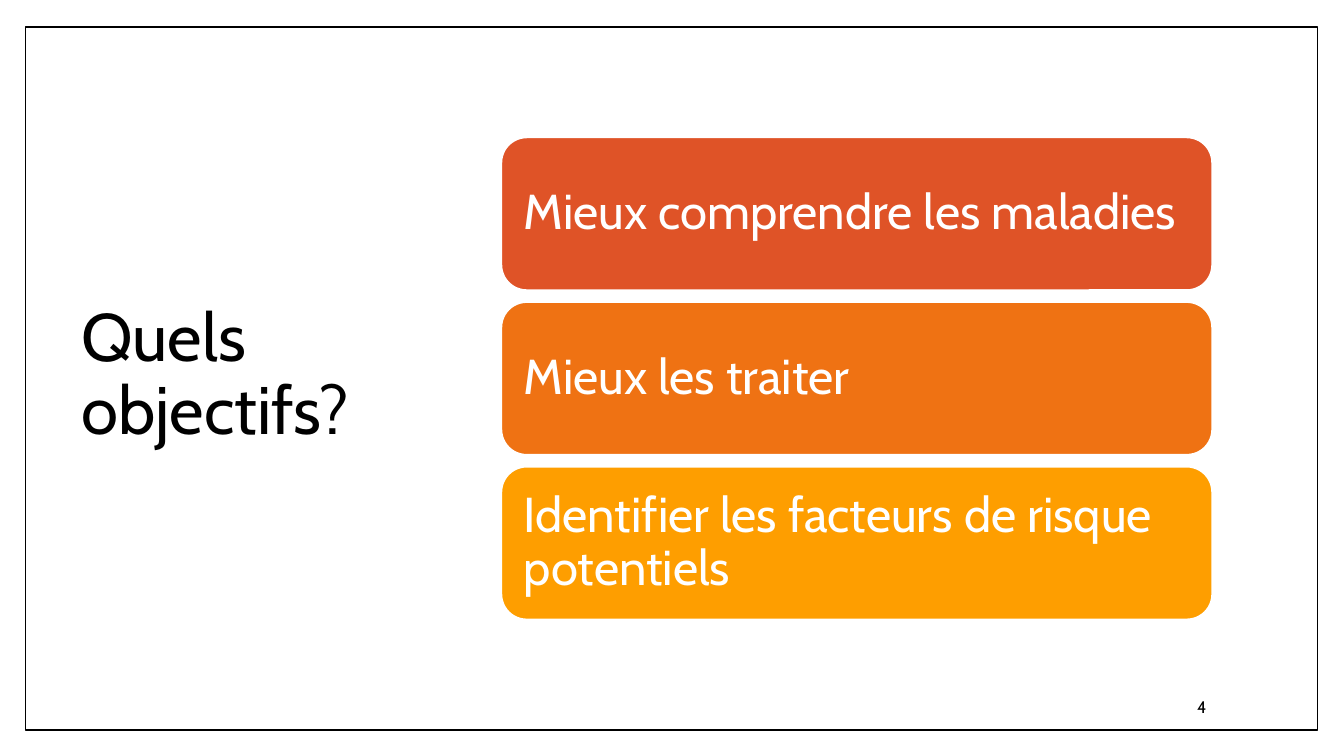
from pptx import Presentation
from pptx.dml.color import RGBColor
from pptx.enum.shapes import MSO_SHAPE
from pptx.enum.text import MSO_ANCHOR, PP_ALIGN
from pptx.util import Pt

RECT, ROUND = MSO_SHAPE.RECTANGLE, MSO_SHAPE.ROUNDED_RECTANGLE
MIDDLE = MSO_ANCHOR.MIDDLE
LEFT, RIGHT = PP_ALIGN.LEFT, PP_ALIGN.RIGHT
FONT = "Cabin"
COLORS = {"ink": "000000", "paper": "FFFFFF", "red": "DF5327",
          "orange": "EF7213", "amber": "FE9E00"}
GOALS = [("Mieux comprendre les maladies", "red"),
         ("Mieux les traiter", "orange"),
         ("Identifier les facteurs de risque potentiels", "amber")]


def color(name):
    """Return the named colour."""
    return RGBColor.from_string(COLORS[name])


def apply(target, values):
    """Set each value as an attribute of the target."""
    for name, value in values.items():
        setattr(target, name, value)


def write(shape, text, size, ink, para, inset=7.2):
    """Write one middle-anchored paragraph into a shape."""
    frame = shape.text_frame
    apply(frame, {"word_wrap": True, "vertical_anchor": MIDDLE,
                  "margin_left": Pt(inset), "margin_right": Pt(inset)})
    line = frame.paragraphs[0]
    apply(line, para)
    run = line.add_run()
    run.text = text
    apply(run.font, {"name": FONT, "size": Pt(size)})
    run.font.color.rgb = color(ink)


def panel(slide, kind, box, fill, edge, width):
    """Add a filled and outlined shape without a shadow."""
    shape = slide.shapes.add_shape(kind, *map(Pt, box))
    shape.shadow.inherit = False
    shape.fill.solid()
    shape.fill.fore_color.rgb = color(fill)
    shape.line.color.rgb = color(edge)
    shape.line.width = Pt(width)
    return shape


def label(slide, box, text, size, para):
    """Add a dark text box."""
    shape = slide.shapes.add_textbox(*map(Pt, box))
    write(shape, text, size, "ink", para)


def cards(slide, box, gap):
    """Stack the goal cards evenly in the box."""
    left, top, width, height = box
    tall = (height - gap * (len(GOALS) - 1)) / len(GOALS)
    for row, (text, fill) in enumerate(GOALS):
        place = (left, top + row * (tall + gap), width, tall)
        card = panel(slide, ROUND, place, fill, "paper", 1.5)
        write(card, text, 35, "paper",
              {"alignment": LEFT, "line_spacing": 0.9}, 10.8)


def main():
    """Build and save the slide."""
    deck = Presentation()
    apply(deck, {"slide_width": Pt(960), "slide_height": Pt(540)})
    slide = deck.slides.add_slide(deck.slide_layouts[6])
    panel(slide, RECT, (18, 19.4, 923, 502), "paper", "ink", 1)
    label(slide, (51, 48.2, 265, 441.4), "Quels objectifs?", 48,
          {"line_spacing": 0.9})
    cards(slide, (358, 98, 508, 344.6), 8.2)
    label(slide, (734.4, 490.3, 134.6, 28.8), "4", 12,
          {"alignment": RIGHT, "space_after": Pt(6)})
    deck.save("out.pptx")


if __name__ == "__main__":
    main()
